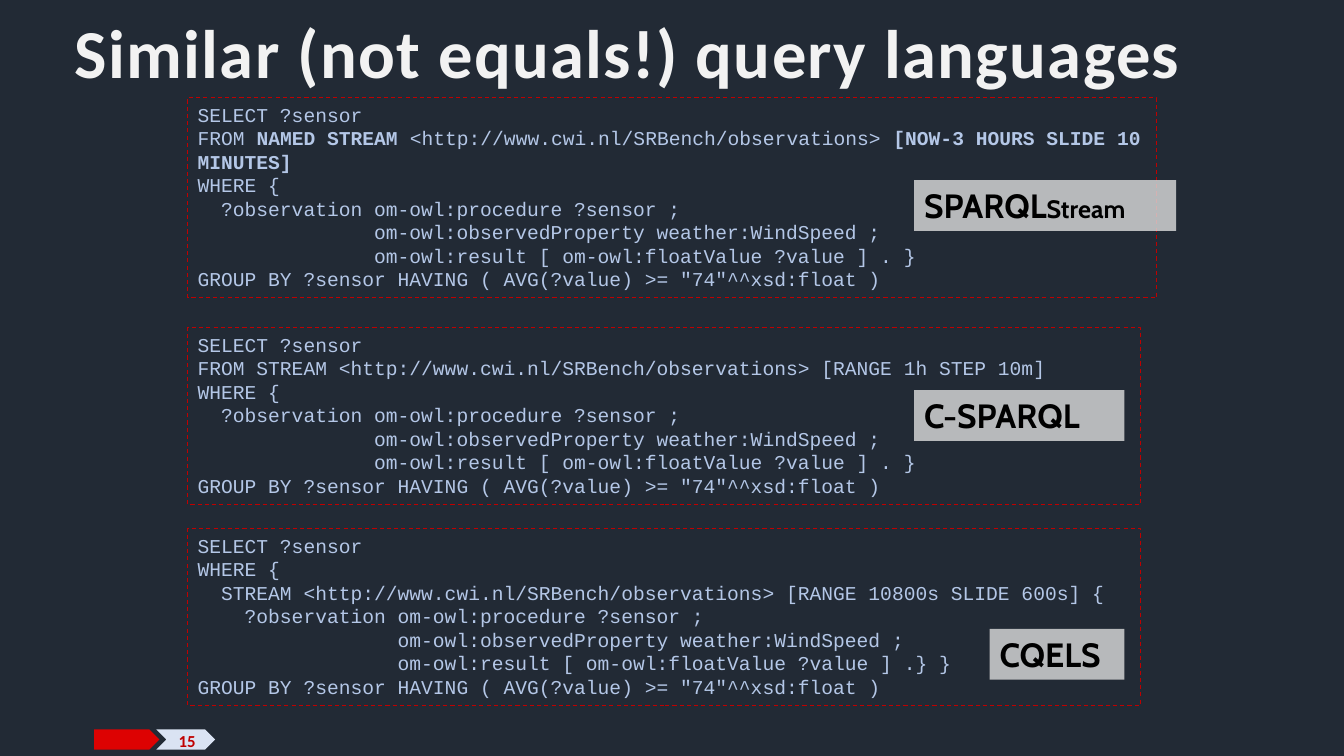
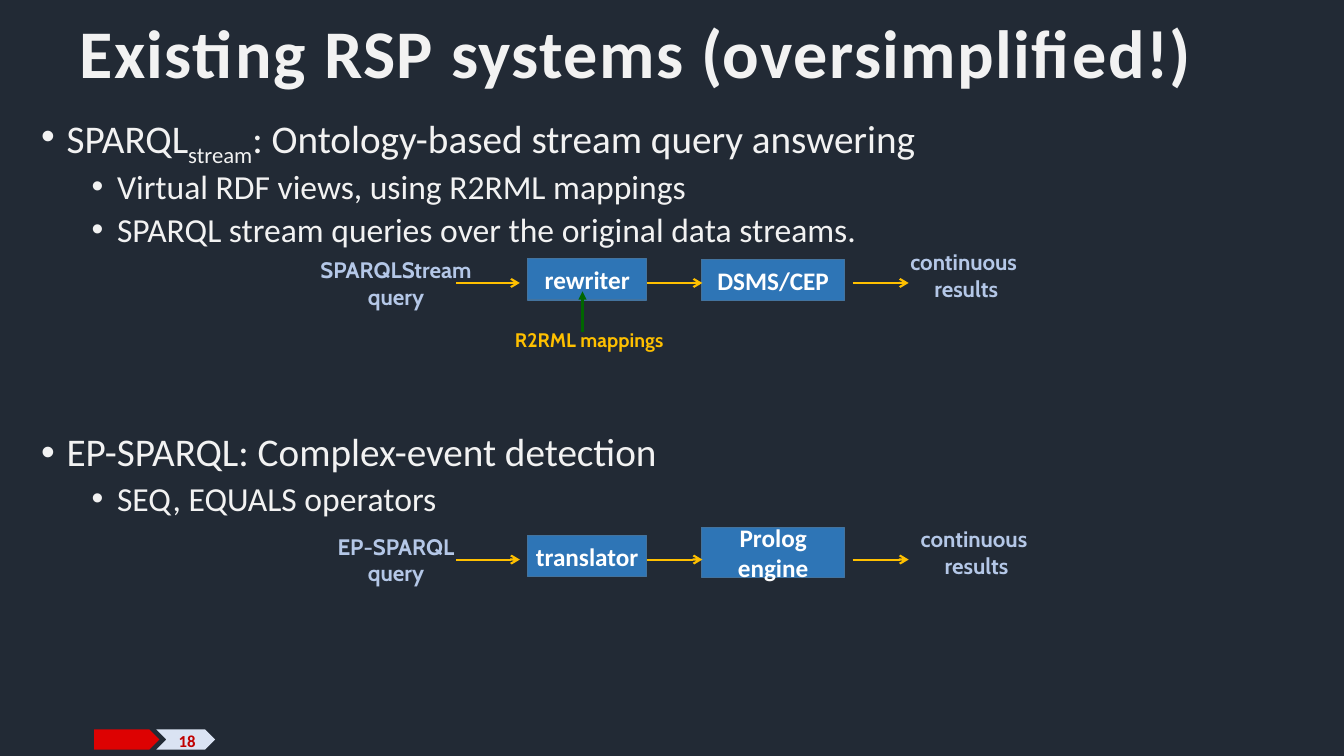
from lxml.etree import SubElement
from pptx import Presentation
from pptx.dml.color import RGBColor
from pptx.enum.dml import MSO_LINE
from pptx.enum.shapes import MSO_CONNECTOR, MSO_SHAPE as SHAPE
from pptx.enum.text import MSO_ANCHOR as ANCHOR, PP_ALIGN as ALIGN
from pptx.oxml.ns import qn
from pptx.util import Cm, Pt

BACK, INK, RED, DARK_RED = "222A35", "F2F2F2", "DD0202", "C00000"
PALE, BLUE, BLUE_EDGE, AMBER, GREEN = "B4C7E7", "2E75B6", "43739E", "FFC000", "006600"
BODY, LABEL, CODE = "Calibri", "Cabin", "Courier New"


def rgb(value):
    return RGBColor.from_string(value)


def write(tf, paragraphs, align=ALIGN.LEFT, anchor=ANCHOR.TOP, **fmt):
    """Fill a frame; a paragraph is a string or a list of strings and (string, format)."""
    tf.word_wrap, tf.vertical_anchor = True, anchor
    for i, runs in enumerate(paragraphs):
        p = tf.add_paragraph() if i else tf.paragraphs[0]
        p.alignment = align
        add_runs(p, runs, **fmt)


def add_runs(p, runs, **fmt):
    for run in [runs] if isinstance(runs, str) else runs:
        text, own = (run, {}) if isinstance(run, str) else run
        look = {**fmt, **own}
        r = p.add_run()
        r.text = text
        r.font.name, r.font.size = look["font"], Pt(look["size"])
        r.font.bold = look.get("bold", False)
        r.font.color.rgb = rgb(look["color"])
        for key in ("spc", "baseline"):
            if key in look:
                r.font._element.set(key, str(look[key]))


class Deck:
    def __init__(self):
        self.prs = Presentation()
        self.prs.slide_width, self.prs.slide_height = Cm(33.87), Cm(19.05)
        self.s = None

    def slide(self, title, number, size):
        self.s = self.prs.slides.add_slide(self.prs.slide_layouts[6])
        fill = self.s.background.fill
        fill.solid()
        fill.fore_color.rgb = rgb(BACK)
        # Footer band with page number
        self.shape(2.37, 18.38, 1.65, 0.51, RED, kind=SHAPE.PENTAGON)
        self.shape(3.94, 18.38, 1.48, 0.51, "DAE3F3", kind=SHAPE.CHEVRON)
        self.text(3.73, 18.16, 1.45, 1.02, [str(number)], align=ALIGN.RIGHT,
                  anchor=ANCHOR.MIDDLE, size=12, color=DARK_RED, bold=True)
        # Title
        tf = self.text(0.8, 0.55, 30.48, 1.73, [title], align=ALIGN.CENTER,
                       anchor=ANCHOR.MIDDLE, size=size, color=INK, bold=True, spc=100)
        tf.paragraphs[0].line_spacing = 0.9
        tf.paragraphs[0].space_after = Pt(12)

    def text(self, x, y, w, h, paragraphs, font=BODY, **fmt):
        tf = self.s.shapes.add_textbox(Cm(x), Cm(y), Cm(w), Cm(h)).text_frame
        write(tf, paragraphs, font=font, **fmt)
        return tf

    def shape(self, x, y, w, h, fill=None, line=None, weight=1, kind=SHAPE.RECTANGLE):
        sp = self.s.shapes.add_shape(kind, Cm(x), Cm(y), Cm(w), Cm(h))
        sp.shadow.inherit = False
        if fill:
            sp.fill.solid()
            sp.fill.fore_color.rgb = rgb(fill)
        else:
            sp.fill.background()
        if line:
            sp.line.color.rgb, sp.line.width = rgb(line), Pt(weight)
        else:
            sp.line.fill.background()
        return sp

    def code(self, y, w, h, lines):
        sp = self.shape(4.73, y, w, h, line=DARK_RED, weight=0.75)
        sp.line.dash_style = MSO_LINE.DASH
        write(sp.text_frame, lines, font=CODE, size=14, color=PALE)

    def tag(self, x, y, w, runs):
        sp = self.shape(x, y, w, 1.28, "D9D9D9")
        color = sp.fill._xPr.find(qn("a:solidFill"))[0]
        SubElement(color, qn("a:alpha"), val="82000")
        write(sp.text_frame, [runs], font=LABEL, size=24, color="000000", bold=True)

    def bullets(self, x, y, w, h, items):
        """Each item is (level, space before, runs)."""
        tf = self.s.shapes.add_textbox(Cm(x), Cm(y), Cm(w), Cm(h)).text_frame
        tf.word_wrap = True
        for i, (level, before, runs) in enumerate(items):
            p = tf.add_paragraph() if i else tf.paragraphs[0]
            p.level, p.line_spacing, p.space_before = level, 0.9, Pt(before)
            pPr = p._p.get_or_add_pPr()
            pPr.set("marL", str(Cm(0.64 + 1.27 * level)))
            pPr.set("indent", str(-Cm(0.64)))
            SubElement(pPr, qn("a:buFont"), typeface="Arial")
            SubElement(pPr, qn("a:buChar"), char="•")
            add_runs(p, runs, font=BODY, size=28 - 4 * level, color=INK)

    def step(self, x, bottom, w, h, name):
        sp = self.shape(x, bottom - h, w, h, BLUE, BLUE_EDGE)
        tf = sp.text_frame
        tf.margin_left = tf.margin_right = 0
        write(tf, [name], align=ALIGN.CENTER, anchor=ANCHOR.MIDDLE,
              font=BODY, size=18, color="FFFFFF", bold=True)

    def caption(self, center, y, lines, size=16, color=PALE):
        self.text(center - 2.5, y, 5, 0.82 * len(lines), lines, font=LABEL,
                  align=ALIGN.CENTER, size=size, color=color, bold=True)

    def arrow(self, x1, y1, x2, y2, color=AMBER, head="arrow"):
        c = self.s.shapes.add_connector(MSO_CONNECTOR.STRAIGHT,
                                        Cm(x1), Cm(y1), Cm(x2), Cm(y2))
        c.line.color.rgb, c.line.width = rgb(color), Pt(1.5)
        SubElement(c.line._get_or_add_ln(), qn("a:tailEnd"), type=head)
        SubElement(c._element.spPr, qn("a:effectLst"))

    def pipeline(self, flow, query, first, second, second_h, result_x):
        """Draw query, two steps and results along the height of the flow."""
        self.step(13.3, flow + 0.43, 3, 1.04, first)
        self.step(17.68, flow + 0.45, 3.61, second_h, second)
        self.caption(9.98, flow - 0.8, [query, "query"])
        self.caption(result_x, flow - 1, ["continuous ", "results"])
        for start, end in ((11.5, 13.1), (16.3, 17.7), (21.49, 22.9)):
            self.arrow(start, flow, end, flow)


def pattern(indent, end):
    """Return the triple pattern shared by the queries."""
    pad = " " * (indent + 13)
    return [" " * indent + "?observation om-owl:procedure ?sensor ;",
            pad + "om-owl:observedProperty weather:WindSpeed ;",
            pad + "om-owl:result [ om-owl:floatValue ?value ] " + end,
            'GROUP BY ?sensor HAVING ( AVG(?value) >= "74"^^xsd:float )']


def languages(deck):
    deck.slide("Similar (not equals!) query languages ", 15, 49)
    select, where = "SELECT ?sensor", "WHERE {"
    url = "<http://www.cwi.nl/SRBench/observations> "
    bold = {"bold": True}
    # Queries
    deck.code(2.46, 24.42, 5.05, [
        select,
        ["FROM ", ("NAMED STREAM ", bold), url, ("[NOW-3 HOURS SLIDE 10 MINUTES]", bold)],
        where, *pattern(2, ". }")])
    deck.code(8.26, 24.01, 4.45, [
        select, "FROM STREAM " + url + "[RANGE 1h STEP 10m]", where, *pattern(2, ". }")])
    deck.code(13.32, 24.01, 4.45, [
        select, where, "  STREAM " + url + "[RANGE 10800s SLIDE 600s] {",
        *pattern(4, ".} }")])
    # Language names
    deck.tag(23.04, 4.54, 6.6, ["SPARQL", ("Stream", {"size": 18})])
    deck.tag(23.04, 9.83, 5.3, "C-SPARQL")
    deck.tag(24.94, 15.85, 3.4, "CQELS")


def systems(deck):
    deck.slide("Existing RSP systems (oversimplified!)", 18, 48.7)
    deck.bullets(0.79, 2.77, 29.21, 13.72, [
        (0, 0, ["SPARQL", ("stream", {"baseline": -25000}),
                ": Ontology-based stream query answering"]),
        (1, 5, "Virtual RDF views, using R2RML mappings"),
        (1, 5, "SPARQL stream queries over the original data streams."),
        (0, 131, "EP-SPARQL: Complex-event detection"),
        (1, 5, "SEQ, EQUALS operators")])
    # Rewriting pipeline and its mappings
    deck.pipeline(7.13, "SPARQLStream", "rewriter", "DSMS/CEP", 1.04, 24.35)
    deck.caption(14.85, 8.15, ["R2RML mappings"], size=14, color=AMBER)
    deck.arrow(14.68, 8.36, 14.68, 7.34, GREEN, "triangle")
    # Event pipeline
    deck.pipeline(14.1, "EP-SPARQL", "translator", "Prolog engine", 1.25, 24.61)


def main():
    deck = Deck()
    languages(deck)
    systems(deck)
    deck.prs.save("out.pptx")


if __name__ == "__main__":
    main()
